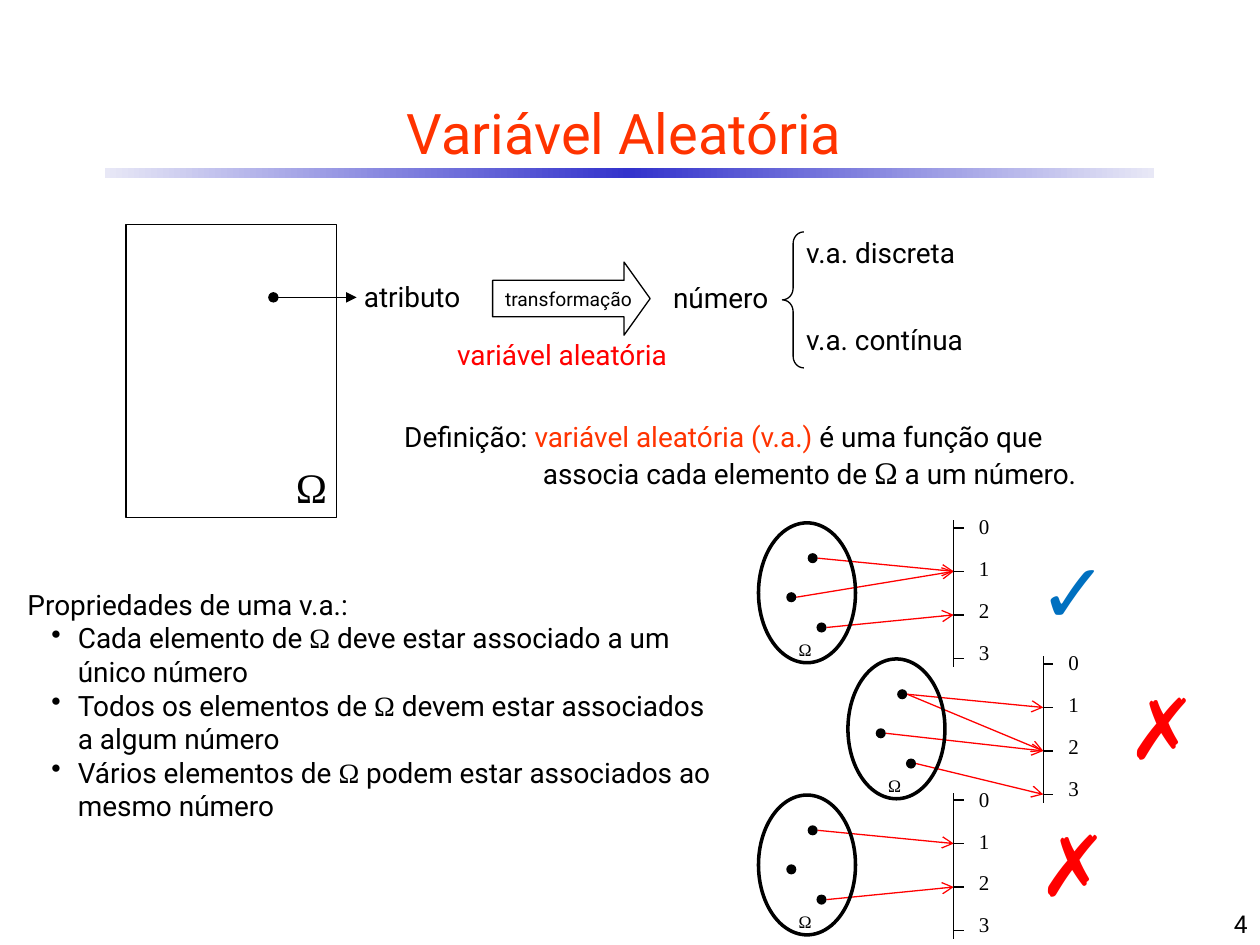
from copy import deepcopy

from lxml.etree import SubElement
from pptx import Presentation
from pptx.dml.color import RGBColor
from pptx.enum.shapes import MSO_CONNECTOR as Connector, MSO_SHAPE as Shape
from pptx.enum.text import MSO_ANCHOR as Anchor, MSO_AUTO_SIZE as AutoSize, PP_ALIGN as Align
from pptx.oxml.ns import qn
from pptx.util import Inches, Pt

COLORS = {
    "ink": "000000",
    "title": "FF3300",
    "red": "FF0000",
    "check": "0070C0",
    "rule": "3333CC",
    "rule_edge": "E8E8F6",
}
SANS = "Roboto"
SERIF = "Times New Roman"
DOTS = [(0.43, 0.28), (0.26, 0.59), (0.5, 0.83)]
DOT_SIZE = 0.08
AXIS = 1.55
TICK_TOP, TICK_STEP = 0.04, 0.345
LABEL_TOP, LABEL_STEP = -0.12, 0.333


def rgb(name):
    return RGBColor.from_string(COLORS[name])


def add_span(para, text, size=16, color="ink", font=SANS):
    span = para.add_run()
    span.text = text
    span.font.size = Pt(size)
    span.font.name = font
    span.font.color.rgb = rgb(color)


class SlideBuilder:
    """Draws styled elements on the current page."""

    def __init__(self, page, line_width=0.75):
        self.page = page
        self.line_width = line_width

    def text(self, left, top, width, height, spans, wrap=False, grow=True,
             align=Align.LEFT, anchor=Anchor.TOP, **style):
        box = self.page.shapes.add_textbox(
            Inches(left), Inches(top), Inches(width), Inches(height))
        frame = box.text_frame
        frame.word_wrap = wrap
        frame.auto_size = AutoSize.SHAPE_TO_FIT_TEXT if grow else AutoSize.NONE
        frame.vertical_anchor = anchor
        self.fill_para(frame.paragraphs[0], spans, align, **style)
        return frame

    def fill_para(self, para, spans, align=Align.LEFT, **style):
        para.alignment = align
        for text, extra in [(spans, {})] if isinstance(spans, str) else spans:
            add_span(para, text, **{**style, **extra})

    def indent(self, para, margin, first, bullet=None):
        props = para._p.get_or_add_pPr()
        props.set("marL", str(Inches(margin)))
        props.set("indent", str(Inches(first)))
        if bullet:
            SubElement(props, qn("a:buChar")).set("char", bullet)

    def shape(self, kind, left, top, width, height, fill=None, line=None,
              line_width=None, adjust=()):
        shape = self.page.shapes.add_shape(
            kind, Inches(left), Inches(top), Inches(width), Inches(height))
        shape.shadow.inherit = False
        for index, value in enumerate(adjust):
            shape.adjustments[index] = value
        if fill:
            shape.fill.solid()
            shape.fill.fore_color.rgb = rgb(fill)
        else:
            shape.fill.background()
        if line:
            shape.line.color.rgb = rgb(line)
            shape.line.width = Pt(line_width or self.line_width)
        else:
            shape.line.fill.background()
        return shape

    def gradient_bar(self, left, top, width, height, edge, middle):
        bar = self.shape(Shape.RECTANGLE, left, top, width, height)
        bar.fill.gradient()
        bar.fill.gradient_angle = 0
        stops = bar._element.spPr.find(".//" + qn("a:gsLst"))
        stops.insert(1, deepcopy(stops[0]))
        for stop, color, place in zip(
                bar.fill.gradient_stops, (edge, middle, edge), (0, 0.5, 1)):
            stop.color.rgb = rgb(color)
            stop.position = place

    def line(self, x1, y1, x2, y2, color="ink", head=None, tail=None):
        line = self.page.shapes.add_connector(
            Connector.STRAIGHT, Inches(x1), Inches(y1), Inches(x2), Inches(y2))
        line.line.color.rgb = rgb(color)
        line.line.width = Pt(self.line_width)
        for tag, end in (("a:headEnd", head), ("a:tailEnd", tail)):
            if end:
                SubElement(line.line._get_or_add_ln(), qn(tag)).set("type", end)
        SubElement(line._element.spPr, qn("a:effectLst"))

    def mapping(self, left, top, links):
        axis = left + AXIS
        ticks = [top + TICK_TOP + TICK_STEP * number for number in range(4)]
        for dot, number in links:
            x, y = DOTS[dot]
            self.line(left + x + DOT_SIZE / 2, top + y, axis, ticks[number],
                      "red", tail="arrow")
        self.shape(Shape.OVAL, left, top, 0.77, 1.11, line="ink", line_width=2)
        for x, y in DOTS:
            self.shape(Shape.OVAL, left + x - DOT_SIZE / 2, top + y - DOT_SIZE / 2,
                       DOT_SIZE, DOT_SIZE, fill="ink")
        self.text(left + 0.22, top + 0.87, 0.31, 0.27, "Ω", size=10, font=SERIF)
        self.line(axis, top + 1.14, axis, top - 0.02)
        for number, tick in enumerate(ticks):
            self.line(axis, tick, axis + 0.08, tick)
            self.text(axis + 0.1, top + LABEL_TOP + LABEL_STEP * number, 0.29, 0.3,
                      str(number), size=12, font=SERIF)


def main():
    deck = Presentation()
    deck.slide_width, deck.slide_height = Inches(10), Inches(7.5)
    page = SlideBuilder(deck.slides.add_slide(deck.slide_layouts[6]))

    page.gradient_bar(0.83, 1.33, 8.33, 0.08, "rule_edge", "rule")
    page.text(0.33, 0.67, 9.25, 0.75, "Variável Aleatória", wrap=True, grow=False,
              align=Align.CENTER, anchor=Anchor.MIDDLE, size=32, color="title")

    page.shape(Shape.RECTANGLE, 1, 1.78, 1.67, 2.33, line="ink")
    page.text(2.25, 3.61, 0.46, 0.51, "Ω", size=24, font=SERIF)
    page.line(2.17, 2.36, 2.83, 2.36, head="oval", tail="triangle")
    page.text(2.79, 2.17, 0.97, 0.37, "atributo")

    definition = page.text(3.11, 3.28, 6.02, 0.67, [
        ("Definição: ", {}),
        ("variável aleatória (v.a.)", {"color": "title"}),
        (" é uma função que associa cada elemento de ", {}),
        ("Ω", {"size": 18, "font": SERIF}),
        (" a um número.", {}),
    ], wrap=True)
    page.indent(definition.paragraphs[0], 1.1, -1.1)

    arrow = page.shape(Shape.RIGHT_ARROW, 3.91, 2.08, 1.25, 0.58, line="ink",
                       adjust=(0.5, 0.357))
    arrow.text_frame.word_wrap = False
    arrow.text_frame.vertical_anchor = Anchor.MIDDLE
    page.fill_para(arrow.text_frame.paragraphs[0], "transformação", size=11)
    page.text(5.24, 2.18, 0.96, 0.37, "número", align=Align.CENTER)
    page.shape(Shape.LEFT_BRACE, 6.21, 1.84, 0.17, 1.08, line="ink",
               adjust=(0.542, 0.5))
    page.text(6.3, 1.82, 1.39, 0.37, "v.a. discreta")
    page.text(6.3, 2.51, 1.47, 0.37, "v.a. contínua")
    page.text(3.53, 2.63, 1.88, 0.37, "variável aleatória", color="red")

    properties = page.text(0.12, 4.48, 5.63, 2.12, "Propriedades de uma v.a.:", wrap=True)
    properties.paragraphs[0].line_spacing = 1.5
    for before, after in [
        ("Cada elemento de ", " deve estar associado a um único número"),
        ("Todos os elementos de ", " devem estar associados a algum número"),
        ("Vários elementos de ", " podem estar associados ao mesmo número"),
    ]:
        para = properties.add_paragraph()
        page.fill_para(para, [(before, {}), ("Ω", {"font": SERIF}), (after, {})])
        page.indent(para, 0.4, -0.21, "•")

    page.text(7.92, 7, 2.08, 0.5, "4", wrap=True, grow=False, align=Align.RIGHT,
              anchor=Anchor.BOTTOM, size=14)

    for left, top, links in [
        (6.02, 4.15, [(0, 1), (1, 1), (2, 2)]),
        (6.02, 6.31, [(0, 1), (2, 2)]),
        (6.73, 5.23, [(0, 1), (1, 2), (2, 3), (0, 2)]),
    ]:
        page.mapping(left, top, links)
    for left, top, width, mark, color in [
        (8.14, 4.23, 0.72, "✓", "check"),
        (8.85, 5.31, 0.64, "✗", "red"),
        (8.14, 6.4, 0.64, "✗", "red"),
    ]:
        page.text(left, top, width, 0.91, mark, size=48, color=color)

    deck.save("out.pptx")


if __name__ == "__main__":
    main()
